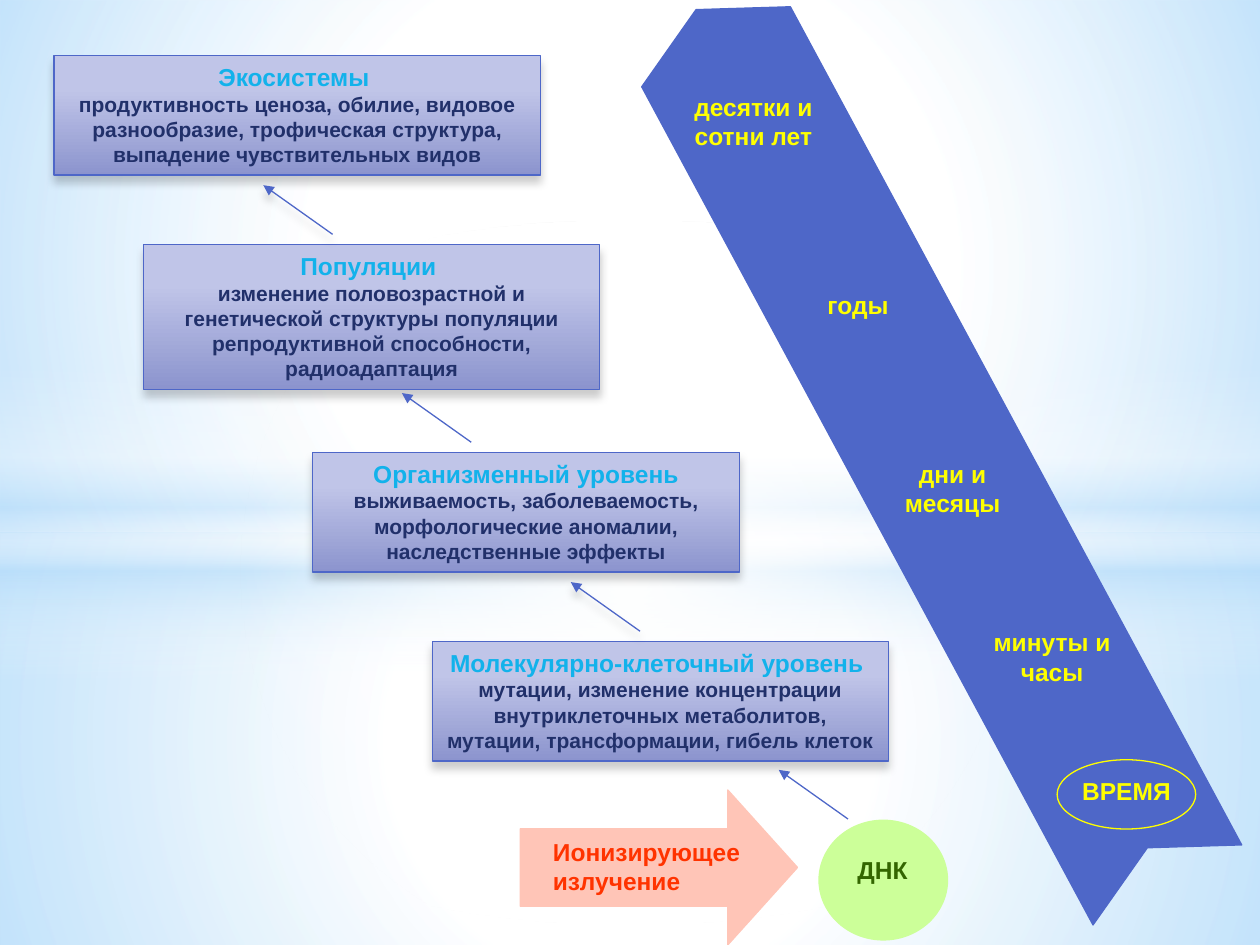
import copy
import lxml.etree
import pptx
import pptx.dml.color
import pptx.enum.shapes
import pptx.enum.text
import pptx.oxml
import pptx.oxml.ns
import pptx.util

COLS, ROWS = 100, 75
NS = 'xmlns:a="http://schemas.openxmlformats.org/drawingml/2006/main"'
HUES = {
    "white": "FFFFFF", "sky": "B4DCFA", "blue": "4E67C8", "pale": "C0C5E8",
    "dusk": "8C94CE", "cyan": "12B2EB", "navy": "21306A", "yellow": "FFFF00",
    "pink": "FFC5B7", "red": "FF3300", "lime": "CCFF99", "green": "336600",
}
KIND = pptx.enum.shapes.MSO_SHAPE
ALIGN = pptx.enum.text.PP_ALIGN

deck = pptx.Presentation()
deck.slide_width = pptx.util.Inches(10)
deck.slide_height = pptx.util.Inches(7.5)
page = deck.slides.add_slide(deck.slide_layouts[6])


def grid(*cells):
    units = (deck.slide_width / COLS, deck.slide_height / ROWS)
    return [round(cell * units[i % 2]) for i, cell in enumerate(cells)]


def hue(name):
    return pptx.dml.color.RGBColor.from_string(HUES[name])


def blend(shape, stops, angle=None):
    marks = "".join(
        f'<a:gs pos="{pos * 1000}"><a:srgbClr val="{HUES[name]}">'
        f'<a:alpha val="{alpha * 1000}"/></a:srgbClr></a:gs>'
        for pos, name, alpha in stops)
    if angle is None:
        way = ('<a:path path="circle"><a:fillToRect l="50000" t="50000" '
               'r="50000" b="50000"/></a:path>')
    else:
        way = f'<a:lin ang="{angle * 60000}" scaled="0"/>'
    shape.fill.background()
    old = shape._element.spPr.find(pptx.oxml.ns.qn("a:noFill"))
    new = pptx.oxml.parse_xml(
        f'<a:gradFill {NS} rotWithShape="1"><a:gsLst>{marks}</a:gsLst>{way}</a:gradFill>')
    old.getparent().replace(old, new)


def shade(shape, on):
    drop = ('<a:outerShdw blurRad="63500" dist="50800" dir="5400000" rotWithShape="0">'
            '<a:srgbClr val="000000"><a:alpha val="20000"/></a:srgbClr>'
            '</a:outerShdw>') if on else ""
    shape._element.spPr.append(
        pptx.oxml.parse_xml(f"<a:effectLst {NS}>{drop}</a:effectLst>"))


def form(kind, box, fill=None, line=None, stops=None, angle=None, drop=False):
    shape = page.shapes.add_shape(kind, *grid(*box))
    if stops:
        blend(shape, stops, angle)
    else:
        shape.fill.solid()
        shape.fill.fore_color.rgb = hue(fill)
    if line:
        shape.line.color.rgb = hue(line)
        shape.line.width = pptx.util.Pt(0.75)
    else:
        shape.line.fill.background()
    shade(shape, drop)
    return shape


def write(para, text, size=14, color="yellow", end=False):
    run = para.add_run()
    run.text = text
    font = run.font
    font.name, font.size, font.bold = "Arial", pptx.util.Pt(size), True
    font.color.rgb = hue(color)
    if end:
        para.add_line_break()
        para._p[-1].append(copy.deepcopy(run._r.rPr))


def frame(shape, align=ALIGN.CENTER):
    body = shape.text_frame
    body.word_wrap = True
    body.auto_size = pptx.enum.text.MSO_AUTO_SIZE.SHAPE_TO_FIT_TEXT
    body.vertical_anchor = pptx.enum.text.MSO_ANCHOR.TOP
    para = body.paragraphs[0]
    para.alignment = align
    return para


def label(box, text, color="yellow", align=ALIGN.CENTER):
    write(frame(page.shapes.add_textbox(*grid(*box)), align), text, color=color)


def scene():
    form(KIND.RECTANGLE, (0, 42.3, 100, 32.7),
         stops=[(0, "white", 91), (37, "white", 76), (100, "sky", 79)])
    form(KIND.RECTANGLE, (0, 0, 100, 42.3),
         stops=[(0, "white", 89), (48, "white", 62), (100, "sky", 79)])
    form(KIND.RECTANGLE, (0, 29, 100, 25), angle=90,
         stops=[(0, "white", 0), (29, "white", 30), (45, "sky", 40),
                (55, "white", 26), (65, "sky", 60), (100, "white", 0)])
    form(KIND.OVAL, (0, 17.5, 100, 55.8),
         stops=[(0, "white", 100), (54, "white", 0)])


def level(box, title, text):
    card = form(KIND.RECTANGLE, box, line="blue", angle=90, drop=True,
                stops=[(28, "pale", 100), (100, "dusk", 100)])
    para = frame(card)
    write(para, title, color="cyan", end=True)
    write(para, text, size=12, color="navy")


def step(x, y, drop):
    line = page.shapes.add_connector(
        pptx.enum.shapes.MSO_CONNECTOR.STRAIGHT, *grid(x + 5.5, y + 3.9, x, y))
    line.line.color.rgb = hue("blue")
    line.line.width = pptx.util.Pt(0.75)
    tip = lxml.etree.SubElement(line.line._get_or_add_ln(), pptx.oxml.ns.qn("a:tailEnd"))
    tip.set("type", "triangle")
    shade(line, drop)


def source(x, y):
    ray = form(KIND.RIGHT_ARROW, (x, y, 22, 12.3), "pink", "pink")
    ray.adjustments[0], ray.adjustments[1] = 0.5, 0.45
    label((x + 1.6, y + 3.2, 17.3, 5.7), "Ионизирующее излучение", "red", ALIGN.LEFT)
    form(KIND.OVAL, (x + 23.7, y + 2.4, 10.2, 9.5), "lime", "lime")
    label((x + 25.2, y + 4.7, 7.1, 3.3), "ДНК", "green")


def clock(box):
    band = form(KIND.CHEVRON, box, "blue", "blue")
    band.adjustments[0] = 0.25
    band.rotation = 241.7
    form(KIND.OVAL, (83.9, 60.3, 11, 5.5), "blue", "yellow")
    for spot, text in TIMES:
        label(spot, text)


LEVELS = [
    ((34.3, 50.9, 36.2, 9.5), "Молекулярно-клеточный уровень ",
     "мутации, изменение концентрации внутриклеточных метаболитов, "
     "мутации, трансформации, гибель клеток"),
    ((11.4, 19.4, 36.2, 11.5), "Популяции ",
     "изменение половозрастной и генетической структуры популяции "
     "репродуктивной способности, радиоадаптация"),
    ((24.8, 35.9, 33.9, 9.5), "Организменный уровень",
     "выживаемость, заболеваемость, морфологические аномалии, "
     "наследственные эффекты"),
    ((4.3, 4.4, 38.6, 9.5), "Экосистемы ",
     "продуктивность ценоза, обилие, видовое разнообразие, "
     "трофическая структура, выпадение чувствительных видов"),
]
TIMES = [
    ((53.1, 6.8, 13.4, 5.7), "десятки и сотни лет"),
    ((63.4, 22.5, 9.4, 3.3), "годы"),
    ((69.7, 35.9, 11.8, 5.7), "дни и месяцы"),
    ((77.6, 49.3, 11.8, 5.7), "минуты и часы"),
    ((84.7, 61.1, 9.4, 3.3), "ВРЕМЯ"),
]
STEPS = [(20.9, 14.7, True), (31.9, 31.2, False),
         (45.3, 46.2, True), (61.8, 61.1, False)]

scene()
source(41.3, 62.7)
for item in LEVELS:
    level(*item)
clock((34.5, 28.8, 78.9, 13.4))
for item in STEPS:
    step(*item)
deck.save("out.pptx")
